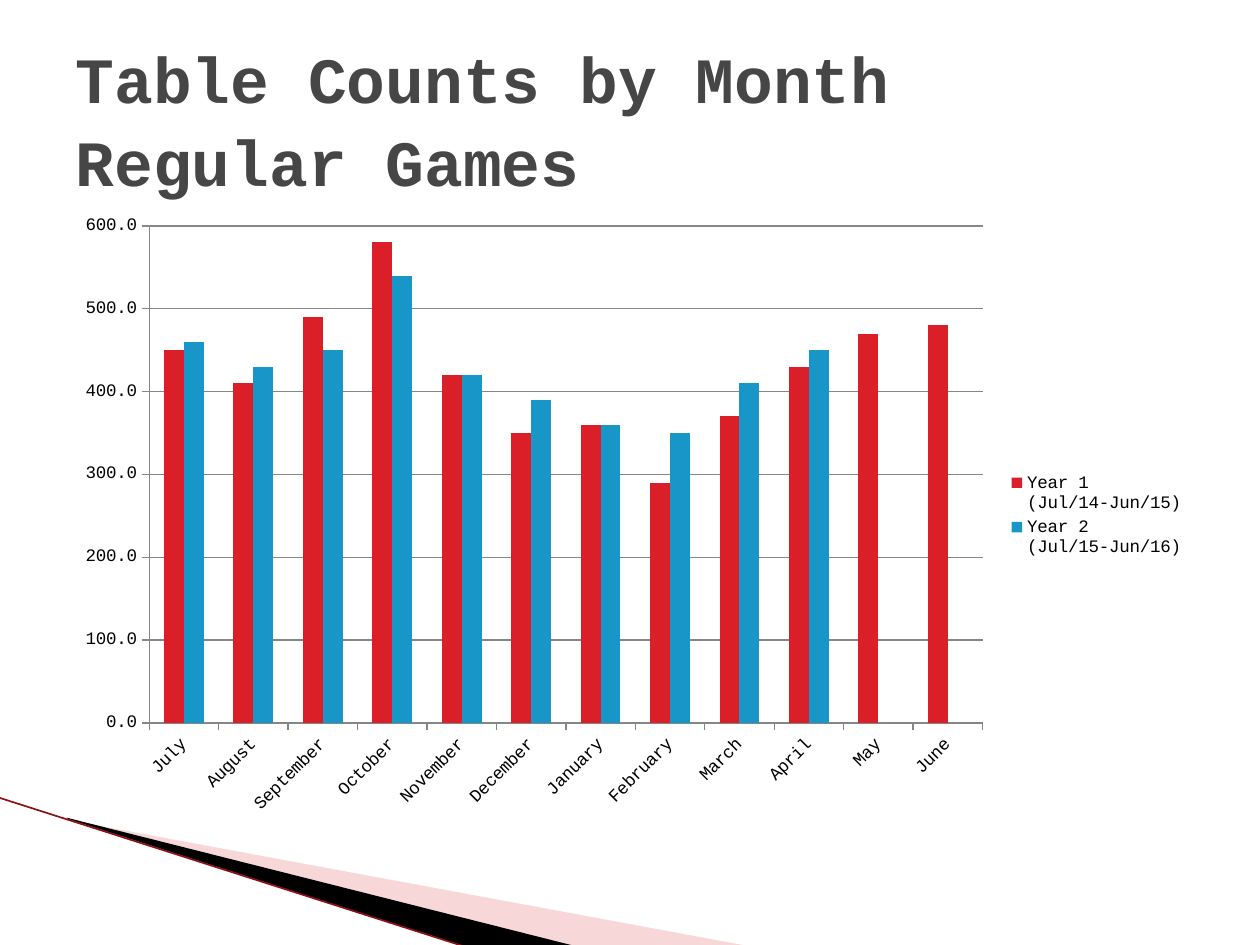
from lxml.etree import SubElement
from pptx import Presentation
from pptx.chart.data import CategoryChartData
from pptx.dml.color import RGBColor
from pptx.enum.chart import XL_CHART_TYPE, XL_LEGEND_POSITION, XL_TICK_MARK
from pptx.enum.shapes import MSO_CONNECTOR
from pptx.enum.text import MSO_ANCHOR, MSO_AUTO_SIZE, PP_ALIGN
from pptx.oxml import parse_xml
from pptx.oxml.ns import nsdecls, qn
from pptx.util import Inches, Pt

THEME = {
    "font": "Courier New", "title_size": 36.9, "chart_size": 10,
    "title": "464646", "text": "000000", "grid": "868686",
    "year1": "DA1F28", "year2": "1896C8",
    "pink": "ED9D9E", "black": "000000", "edge": "8E1016",
}
W, H = 10, 7.5


def color(name):
    return RGBColor.from_string(THEME[name])


def set_font(font, **fmt):
    font.name = THEME["font"]
    font.size = Pt(THEME[fmt["size"]])
    font.bold = fmt.get("bold", False)
    font.color.rgb = color(fmt["color"])


prs = Presentation()
prs.slide_width, prs.slide_height = Inches(W), Inches(H)
s = prs.slides.add_slide(prs.slide_layouts[5])

# Title
sp = s.shapes.title
sp.left, sp.top = Inches(0.05 * W), Inches(0.04 * H)
sp.width, sp.height = Inches(0.9 * W), Inches(H / 6)
tf = sp.text_frame
tf.word_wrap = True
tf.auto_size = MSO_AUTO_SIZE.NONE
tf.vertical_anchor = MSO_ANCHOR.MIDDLE
tf.text = "Table Counts by Month\vRegular Games"
p = tf.paragraphs[0]
p.alignment = PP_ALIGN.LEFT
p.line_spacing = 1.07
for r in p.runs:
    set_font(r.font, size="title_size", color="title", bold=True)

# Corner wedges, back to front: fill, opacity in percent, corners in inches
wedges = [
    ("pink", 40, [(0.55, 6.51), (5.95, 7.51), (4.56, 7.51), (0.55, 6.5)]),
    ("black", 100, [(0.53, 6.49), (4.57, 7.51), (3.72, 7.52), (0.54, 6.5)]),
]
for name, opacity, corners in wedges:
    points = [(Inches(x), Inches(y)) for x, y in corners]
    fb = s.shapes.build_freeform(*points[0])
    fb.add_line_segments(points[1:], close=True)
    sp = fb.convert_to_shape()
    sp.shadow.inherit = False
    sp.line.fill.background()
    sp.fill.solid()
    sp.fill.fore_color.rgb = color(name)
    if opacity < 100:
        clr = sp.fill._xPr.find(".//" + qn("a:srgbClr"))
        SubElement(clr, qn("a:alpha")).set("val", str(opacity * 1000))

edge = s.shapes.add_connector(MSO_CONNECTOR.STRAIGHT, Inches(-0.01), Inches(6.33),
                              Inches(3.71), Inches(7.52))
edge.line.color.rgb = color("edge")
edge.line.width = Pt(0.95)
SubElement(edge._element.spPr, qn("a:effectLst"))

# Chart
data = CategoryChartData(number_format="0.0")
data.categories = ["July", "August", "September", "October", "November", "December",
                   "January", "February", "March", "April", "May", "June"]
data.add_series("Year 1\n(Jul/14-Jun/15)",
                [450, 410, 490, 580, 420, 350, 360, 290, 370, 430, 470, 480])
data.add_series("Year 2\n(Jul/15-Jun/16)",
                [460, 430, 450, 540, 420, 390, 360, 350, 410, 450, None, None])
chart = s.shapes.add_chart(XL_CHART_TYPE.COLUMN_CLUSTERED, Inches(0.05 * W), Inches(0.216 * H),
                           Inches(0.9 * W), Inches(0.66 * H), data).chart
set_font(chart.font, size="chart_size", color="text")
chart.has_title = False
chart.has_legend = True
chart.legend.position = XL_LEGEND_POSITION.RIGHT
chart.legend.include_in_layout = False

plot = chart.plots[0]
plot.gap_width, plot.overlap = 150, 0
plot.vary_by_categories = False
for series, name in zip(plot.series, ("year1", "year2")):
    series.format.fill.solid()
    series.format.fill.fore_color.rgb = color(name)
    series.invert_if_negative = False

value_axis, category_axis = chart.value_axis, chart.category_axis
for axis in (value_axis, category_axis):
    axis.major_tick_mark = XL_TICK_MARK.OUTSIDE
    axis.format.line.color.rgb = color("grid")
    axis.format.line.width = Pt(0.75)
value_axis.minimum_scale, value_axis.maximum_scale = 0, 600
value_axis.major_unit = 100
value_axis.tick_labels.number_format = "0.0"
value_axis.tick_labels.number_format_is_linked = False
value_axis.has_major_gridlines = True
value_axis.major_gridlines.format.line.color.rgb = color("grid")
value_axis.major_gridlines.format.line.width = Pt(0.75)
set_font(category_axis.tick_labels.font, size="chart_size", color="text")
category_axis._element.txPr.find(qn("a:bodyPr")).set("rot", str(-45 * 60000))

# Plot area as shares of the chart's size
area = chart._chartSpace.chart.plotArea
for old in area.findall(qn("c:layout")):
    area.remove(old)
area.insert(0, parse_xml(
    f'<c:layout {nsdecls("c")}><c:manualLayout><c:layoutTarget val="inner"/>'
    '<c:xMode val="edge"/><c:yMode val="edge"/><c:x val="0.076"/><c:y val="0.035"/>'
    '<c:w val="0.735"/><c:h val="0.797"/></c:manualLayout></c:layout>'))

prs.save("out.pptx")
